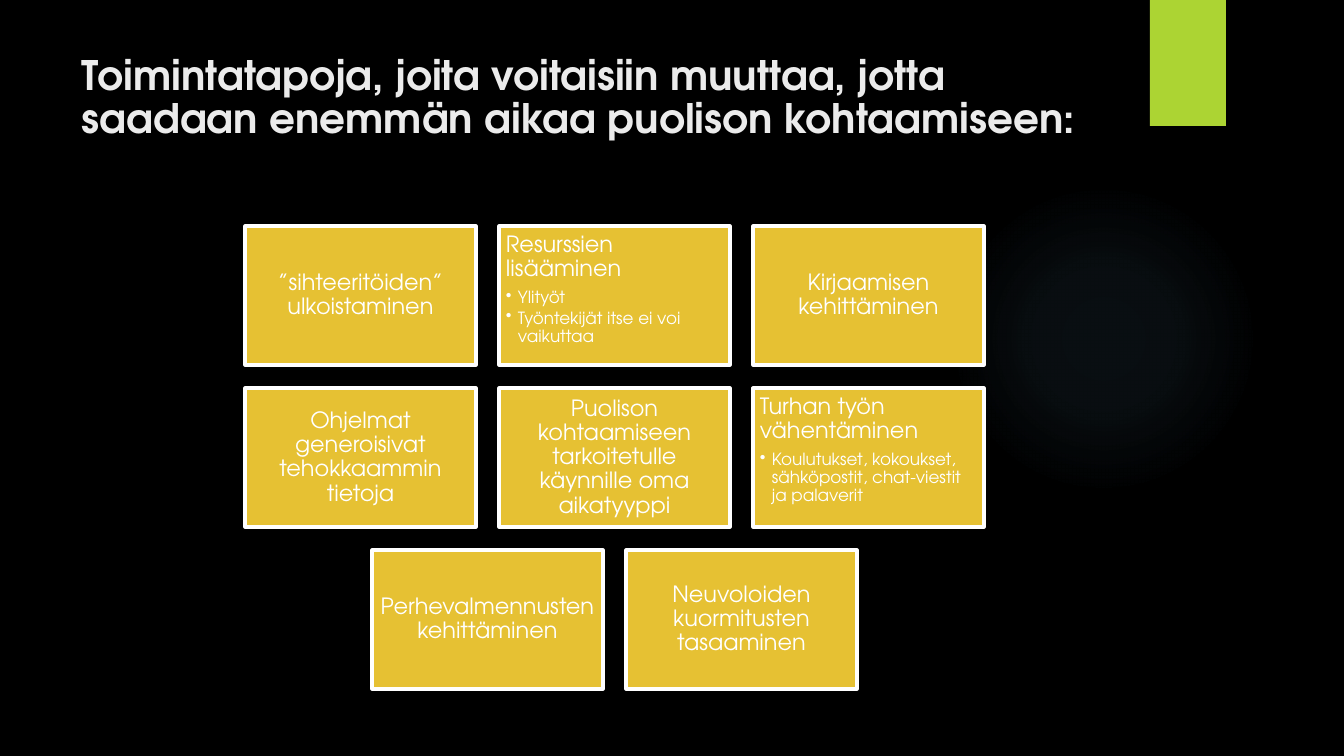
from dataclasses import dataclass

from pptx import Presentation
from pptx.dml.color import RGBColor
from pptx.enum.shapes import MSO_SHAPE
from pptx.enum.text import MSO_ANCHOR, PP_ALIGN
from pptx.oxml import parse_xml
from pptx.oxml.ns import nsdecls, qn
from pptx.util import Pt

PX = 914400 / 100.8


@dataclass(frozen=True)
class Theme:
    back: str = "000000"
    title: str = "EBEBEB"
    text: str = "FFFFFF"
    card: str = "E6C133"
    tab: str = "ACD433"
    glow: str = "7AC4F0"
    face: str = "TeX Gyre Adventor"
    head: int = 29
    body: int = 16
    note: int = 12


THEME = Theme()
CARDS = [
    [("”sihteeritöiden” ulkoistaminen", []),
     ("Resurssien lisääminen", ["Ylityöt", "Työntekijät itse ei voi vaikuttaa"]),
     ("Kirjaamisen kehittäminen", [])],
    [("Ohjelmat generoisivat tehokkaammin tietoja", []),
     ("Puolison kohtaamiseen tarkoitetulle käynnille oma aikatyyppi", []),
     ("Turhan työn vähentäminen",
      ["Koulutukset, kokoukset, sähköpostit, chat-viestit ja palaverit"])],
    [("Perhevalmennusten kehittäminen", []),
     ("Neuvoloiden kuormitusten tasaaminen", [])],
]


def px(n):
    return round(n * PX)


def color(code):
    return RGBColor.from_string(code)


def add_box(slide, box, fill, kind=MSO_SHAPE.RECTANGLE):
    shape = slide.shapes.add_shape(kind, *map(px, box))
    shape.shadow.inherit = False
    shape.fill.solid()
    shape.fill.fore_color.rgb = color(fill)
    shape.line.fill.background()
    return shape


def style(para, size, tint, bold=False):
    para.line_spacing = 0.9
    font = para.font
    font.name, font.size, font.bold = THEME.face, Pt(size), bold
    font.color.rgb = color(tint)


def add_glow(slide, box):
    orb = add_box(slide, box, THEME.glow, MSO_SHAPE.OVAL)
    stops = "".join(
        f'<a:gs pos="{at * 1000}"><a:srgbClr val="{THEME.glow}">'
        f'<a:alpha val="{alpha * 1000}"/></a:srgbClr></a:gs>'
        for at, alpha in [(0, 7), (36, 6), (69, 0), (100, 0)])
    grad = parse_xml(
        f'<a:gradFill {nsdecls("a")}><a:gsLst>{stops}</a:gsLst><a:path path="circle">'
        '<a:fillToRect l="50000" t="50000" r="50000" b="50000"/></a:path></a:gradFill>')
    props = orb._element.spPr
    props.replace(props.find(qn("a:solidFill")), grad)


def add_title(slide, box, text):
    frame = slide.shapes.add_textbox(*map(px, box)).text_frame
    frame.word_wrap = True
    para = frame.paragraphs[0]
    para.text = text
    style(para, THEME.head, THEME.title, True)


def add_note(frame, text):
    para = frame.add_paragraph()
    para.text, para.level = text, 1
    props = para._p.get_or_add_pPr()
    props.set("marL", str(px(12)))
    props.set("indent", str(px(-12)))
    props.append(parse_xml(f'<a:buChar {nsdecls("a")} char="•"/>'))
    style(para, THEME.note, THEME.text)
    para.space_after = Pt(THEME.note * 0.15)


def add_card(slide, box, text, notes):
    card = add_box(slide, box, THEME.card)
    card.line.color.rgb = color(THEME.text)
    card.line.width = Pt(2.25)
    frame = card.text_frame
    frame.word_wrap = True
    frame.margin_left = frame.margin_right = px(7)
    frame.margin_top = frame.margin_bottom = px(7)
    frame.vertical_anchor = MSO_ANCHOR.TOP if notes else MSO_ANCHOR.MIDDLE
    para = frame.paragraphs[0]
    para.text = text
    para.alignment = PP_ALIGN.LEFT if notes else PP_ALIGN.CENTER
    style(para, THEME.body, THEME.text)
    para.space_after = Pt(THEME.body * 0.35)
    for note in notes:
        add_note(frame, note)


def add_grid(slide, box, rows):
    left, top, width, height = box
    gap = 23
    most = max(map(len, rows))
    wide = (width - gap * (most - 1)) // most
    high = (height - gap * (len(rows) - 1)) // len(rows)
    for i, row in enumerate(rows):
        start = left + (most - len(row)) * (wide + gap) // 2
        for j, (text, notes) in enumerate(row):
            place = (start + j * (wide + gap), top + i * (high + gap), wide, high)
            add_card(slide, place, text, notes)


def main():
    deck = Presentation()
    deck.slide_width, deck.slide_height = px(1344), px(756)
    slide = deck.slides.add_slide(deck.slide_layouts[6])
    slide.background.fill.solid()
    slide.background.fill.fore_color.rgb = color(THEME.back)
    add_glow(slide, (949, 184, 310, 310))
    add_title(slide, (72, 50, 1037, 154),
              "Toimintatapoja, joita voitaisiin muuttaa, jotta saadaan "
              "enemmän aikaa puolison kohtaamiseen:")
    add_box(slide, (1150, 0, 76, 126), THEME.tab)
    add_grid(slide, (245, 226, 739, 463), CARDS)
    deck.save("out.pptx")


if __name__ == "__main__":
    main()
